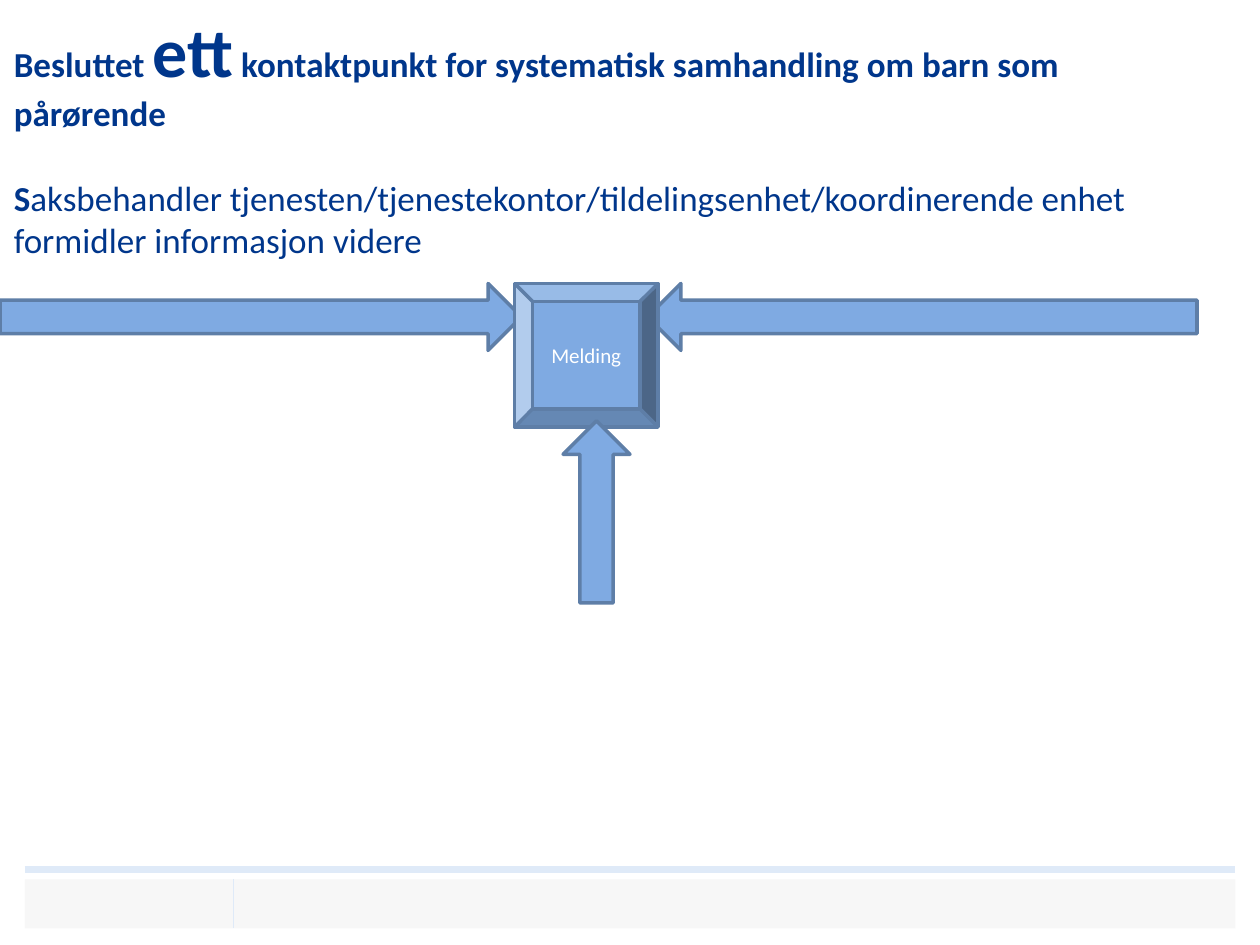
from lxml import etree
from pptx import Presentation
from pptx.dml.color import RGBColor
from pptx.enum import shapes, text
from pptx.oxml import ns
from pptx.util import Pt

NAVY = RGBColor(0x00, 0x36, 0x8B)
BLUE = RGBColor(0x7F, 0xAA, 0xE2)
EDGE = RGBColor(0x5E, 0x7E, 0xA7)
PALE = RGBColor(0xDF, 0xEA, 0xF8)
GREY = RGBColor(0xF7, 0xF7, 0xF7)
WHITE = RGBColor(0xFF, 0xFF, 0xFF)
SHAPE = shapes.MSO_SHAPE


def add_text(para, words, size=20, color=NAVY, bold=False):
    """Append a formatted span to a paragraph."""
    span = para.add_run()
    span.text = words
    span.font.name = "Calibri"
    span.font.size = Pt(size)
    span.font.bold = bold
    span.font.color.rgb = color


def add_block(page, kind, left, top, width, height, fill=BLUE, edge=EDGE):
    """Add a flat filled shape, outlined when an edge colour is given."""
    block = page.shapes.add_shape(kind, Pt(left), Pt(top), Pt(width), Pt(height))
    block.shadow.inherit = False
    block.fill.solid()
    block.fill.fore_color.rgb = fill
    if edge is None:
        block.line.fill.background()
    else:
        block.line.color.rgb = edge
        block.line.width = Pt(2)
    return block


def add_rule(page, start, end, weight):
    """Add a pale straight line without a shadow."""
    rule = page.shapes.add_connector(
        shapes.MSO_CONNECTOR.STRAIGHT, *(Pt(value) for value in start + end))
    rule.line.color.rgb = PALE
    rule.line.width = Pt(weight)
    etree.SubElement(rule._element.spPr, ns.qn("a:effectLst"))


def add_footer(page, left, top, width, height):
    """Draw the footer band with its top rule and column divider."""
    add_block(page, SHAPE.RECTANGLE, left, top, width, height, GREY, None)
    add_rule(page, (left, top - 5.75), (left + width, top - 5.75), 4)
    add_rule(page, (left + 119, top), (left + 119, top + height), 0.5)


def add_heading(page, left, top, width, height):
    """Fill the title placeholder with the decision and its explanation."""
    box = page.shapes.title
    box.left, box.top, box.width, box.height = map(Pt, (left, top, width, height))
    frame = box.text_frame
    frame.word_wrap = True
    frame.auto_size = text.MSO_AUTO_SIZE.SHAPE_TO_FIT_TEXT
    frame.vertical_anchor = text.MSO_ANCHOR.TOP
    decision, detail = frame.paragraphs[0], frame.add_paragraph()
    for para in (decision, detail):
        para.alignment = text.PP_ALIGN.LEFT
    detail.space_before = Pt(24.4)
    add_text(decision, "Besluttet ", bold=True)
    add_text(decision, "ett", size=40, bold=True)
    add_text(decision, " kontaktpunkt for systematisk samhandling om barn som pårørende",
             bold=True)
    add_text(detail, "S", bold=True)
    add_text(detail, "aksbehandler tjenesten/tjenestekontor/tildelingsenhet/"
                     "koordinerende enhet formidler informasjon videre")


def add_message_flow(page, left, top, width, height):
    """Draw three arrows that meet at the message button."""
    thick, side = 38.25, 82
    button_left = left + 294
    add_block(page, SHAPE.RIGHT_ARROW, left, top, 298, thick)
    add_block(page, SHAPE.LEFT_ARROW, left + 370, top, width - 370, thick)
    button = add_block(page, SHAPE.BEVEL, button_left, top, side, side)
    button.text_frame.vertical_anchor = text.MSO_ANCHOR.MIDDLE
    para = button.text_frame.paragraphs[0]
    para.alignment = text.PP_ALIGN.CENTER
    add_text(para, "Melding", size=12, color=WHITE)
    arrow_top = side - 3.5
    add_block(page, SHAPE.UP_ARROW, left + 321.75, top + arrow_top,
              thick, height - arrow_top)


def main():
    """Build and save the deck."""
    deck = Presentation()
    deck.slide_width, deck.slide_height = Pt(720), Pt(540)
    page = deck.slides.add_slide(deck.slide_layouts[5])
    add_footer(page, 14.25, 502.5, 691.75, 28)
    add_heading(page, 0.72, 0.72, 702.72, 177)
    add_message_flow(page, 0, 162, 684, 182.5)
    deck.save("out.pptx")


if __name__ == "__main__":
    main()
